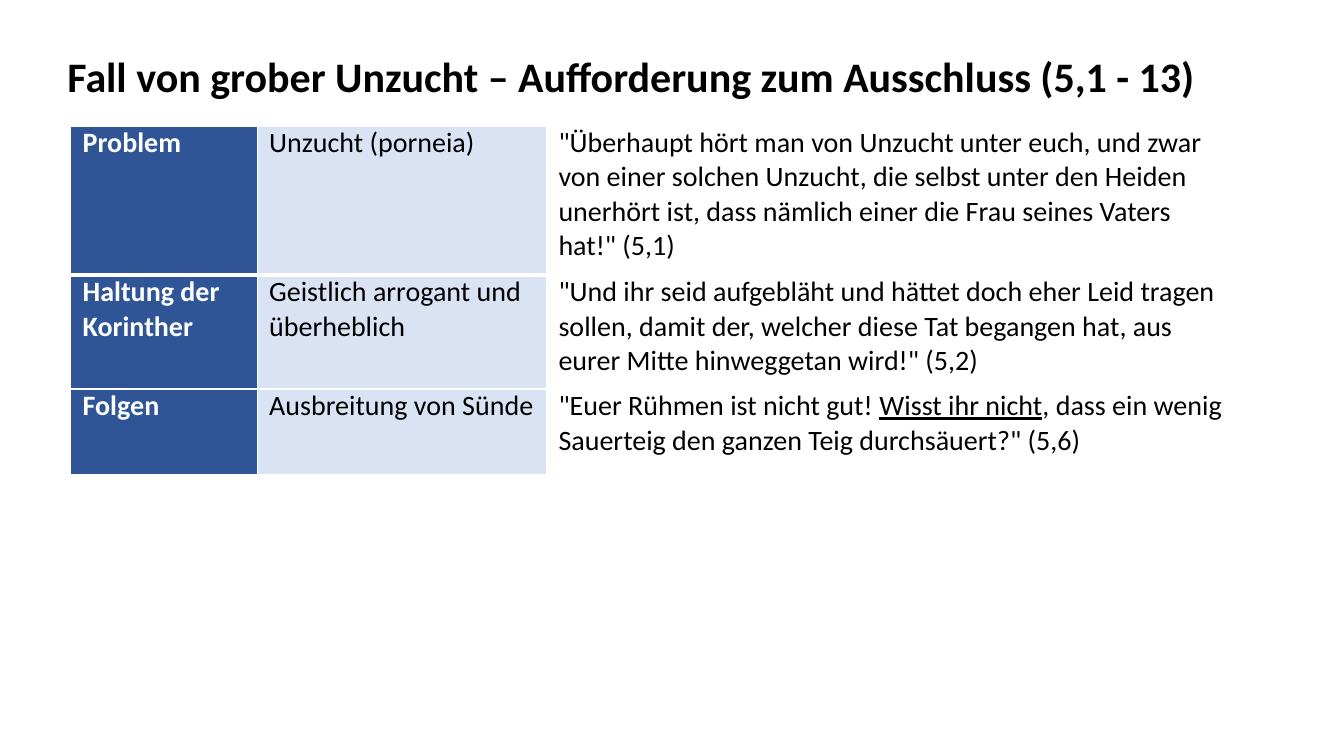
from lxml import etree
from pptx import Presentation
from pptx.dml.color import RGBColor
from pptx.enum import text
from pptx.oxml import ns
from pptx.util import Inches, Pt

TITLE = "Fall von grober Unzucht – Aufforderung zum Ausschluss (5,1 - 13)"

# Each cell is a list of paragraphs, each paragraph a list of (words, underlined) runs.
ROWS = [
    [
        [[("Problem", False)]],
        [[("Unzucht (porneia)", False)]],
        [[('"Überhaupt hört man von Unzucht unter euch, und zwar von einer solchen '
           'Unzucht, die selbst unter den Heiden unerhört ist, dass nämlich einer '
           'die Frau seines Vaters hat!" (5,1)', False)]],
    ],
    [
        [[("Haltung der Korinther", False)]],
        [[("Geistlich arrogant und", False)], [("überheblich", False)]],
        [[('"Und ihr seid aufgebläht und hättet doch eher Leid tragen sollen, damit '
           'der, welcher diese Tat begangen hat, aus eurer Mitte hinweggetan wird!" '
           '(5,2)', False)]],
    ],
    [
        [[("Folgen", False)]],
        [[("Ausbreitung von Sünde", False)]],
        [[('"Euer Rühmen ist nicht gut! ', False), ("Wisst ihr nicht", True),
          (', dass ein wenig Sauerteig den ganzen Teig durchsäuert?" (5,6)', False)]],
    ],
]

THEME = {
    "font": "Calibri",
    "title_size": 30,
    "cell_size": 20,
    "black": "000000",
    "white": "FFFFFF",
    "label_fill": "2F5597",
    "topic_fill": "DAE3F3",
    "thin": 1,
    "thick": 3,
}
COLUMNS = [  # width, fill, text colour, bold
    (1.85, THEME["label_fill"], THEME["white"], True),
    (2.87, THEME["topic_fill"], THEME["black"], False),
    (6.92, THEME["white"], THEME["black"], False),
]
ROW_HEIGHTS = [1.48, 1.13, 0.85]
TITLE_BOX = (0.57, 0.45, 11.65, 0.61)
TABLE_LEFT, TABLE_TOP = 0.7, 1.25
CELL_FORMAT = {
    "margin_left": Inches(0.12),
    "margin_right": Inches(0.12),
    "margin_top": 0,
    "margin_bottom": 0,
    "vertical_anchor": text.MSO_ANCHOR.TOP,
}


def add_run(paragraph, words, size, color, bold, underline=None):
    run = paragraph.add_run()
    run.text = words
    run.font.color.rgb = RGBColor.from_string(color)
    font_format = {"name": THEME["font"], "size": Pt(size), "bold": bold,
                   "underline": underline}
    for name, value in font_format.items():
        setattr(run.font, name, value)


def add_border(cell, side, width):
    """Draw one white edge; side is L, R, T or B, in that order."""
    line = etree.SubElement(cell._tc.get_or_add_tcPr(), ns.qn("a:ln" + side),
                            w=str(Pt(width)))
    fill = etree.SubElement(line, ns.qn("a:solidFill"))
    etree.SubElement(fill, ns.qn("a:srgbClr"), val=THEME["white"])


def add_title(slide):
    box = slide.shapes.add_textbox(*map(Inches, TITLE_BOX))
    box.text_frame.word_wrap = False
    add_run(box.text_frame.paragraphs[0], TITLE, THEME["title_size"],
            THEME["black"], True)


def fill_cell(cell, paragraphs, row_index, fill, color, bold):
    for name, value in CELL_FORMAT.items():
        setattr(cell, name, value)
    # The first row is set off from the others by a thicker rule.
    thick_side = {0: "B", 1: "T"}.get(row_index)
    for side in "LRTB":
        add_border(cell, side, THEME["thick" if side == thick_side else "thin"])
    cell.fill.solid()
    cell.fill.fore_color.rgb = RGBColor.from_string(fill)
    frame = cell.text_frame
    for index, runs in enumerate(paragraphs):
        paragraph = frame.add_paragraph() if index else frame.paragraphs[0]
        for words, underlined in runs:
            add_run(paragraph, words, THEME["cell_size"], color, bold, underlined)


def add_overview(slide):
    width = sum(column[0] for column in COLUMNS)
    overview = slide.shapes.add_table(
        len(ROWS), len(COLUMNS), Inches(TABLE_LEFT), Inches(TABLE_TOP),
        Inches(width), Inches(sum(ROW_HEIGHTS))).table
    overview.first_row = overview.horz_banding = False
    for column, (column_width, *_) in zip(overview.columns, COLUMNS):
        column.width = Inches(column_width)
    for row_index, (height, cells) in enumerate(zip(ROW_HEIGHTS, ROWS)):
        overview.rows[row_index].height = Inches(height)
        for column_index, paragraphs in enumerate(cells):
            fill_cell(overview.cell(row_index, column_index), paragraphs, row_index,
                      *COLUMNS[column_index][1:])


def main():
    deck = Presentation()
    deck.slide_width, deck.slide_height = Inches(13.33), Inches(7.5)
    slide = deck.slides.add_slide(deck.slide_layouts[6])
    add_title(slide)
    add_overview(slide)
    deck.save("out.pptx")


if __name__ == "__main__":
    main()
